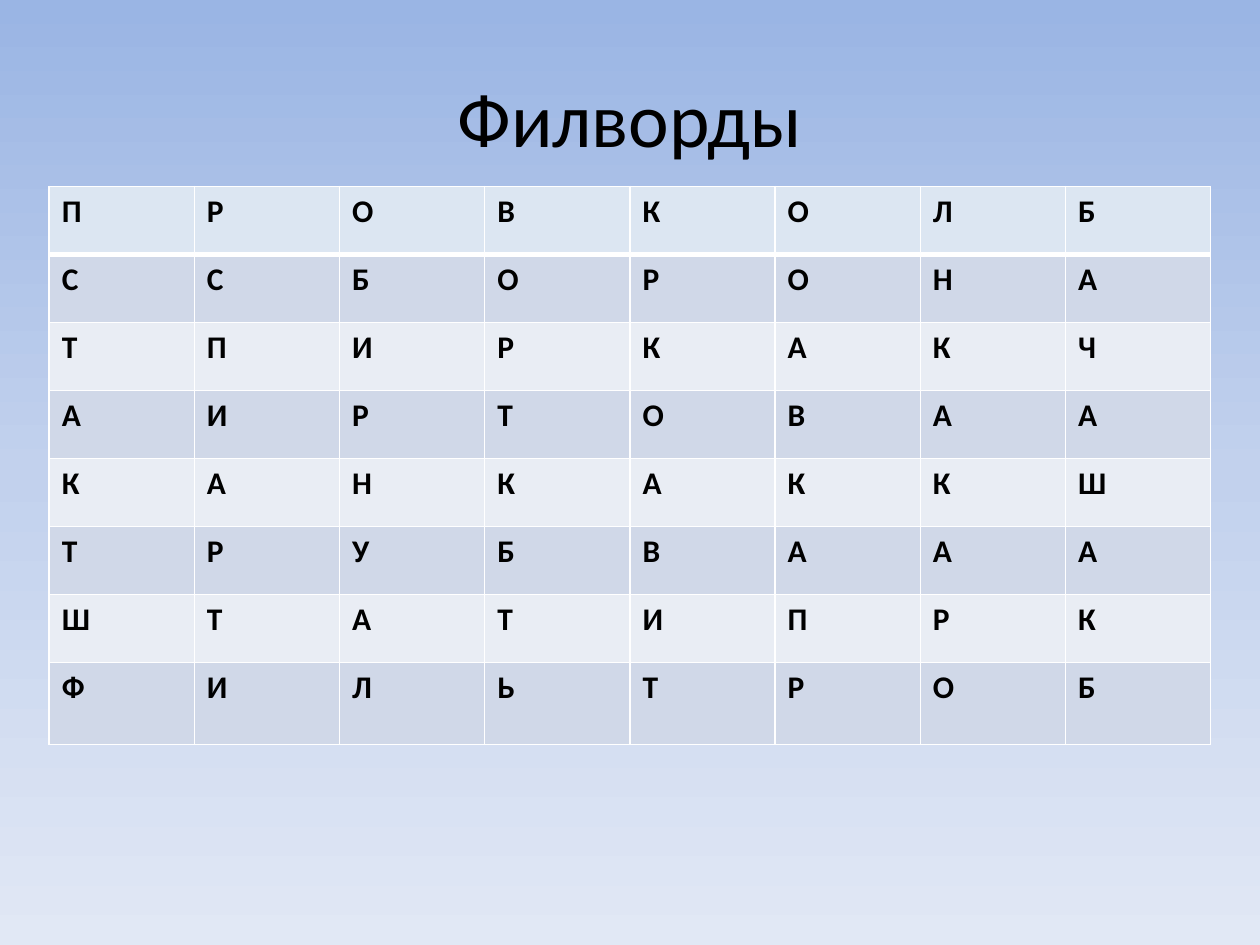
from copy import deepcopy

from lxml.etree import SubElement
from pptx import Presentation
from pptx.dml.color import RGBColor
from pptx.enum.text import MSO_ANCHOR, PP_ALIGN
from pptx.oxml.ns import qn
from pptx.util import Inches, Pt

LETTERS = [
    "ПРОВКОЛБ",
    "ССБОРОНА",
    "ТПИРКАКЧ",
    "АИРТОВАА",
    "КАНКАККШ",
    "ТРУБВААА",
    "ШТАТИПРК",
    "ФИЛЬТРОБ",
]


def color(value):
    return RGBColor.from_string(value)


class Page:
    """Holds the style and the current slide and adds elements to it."""

    font = "Calibri"
    ink = "000000"
    line = "FFFFFF"
    header = "DCE6F2"
    bands = ("E9EDF4", "D0D8E8")

    def __init__(self, deck):
        self.slide = deck.slides.add_slide(deck.slide_layouts[6])

    def background(self, stops):
        fill = self.slide.background.fill
        fill.gradient()
        fill.gradient_angle = 270
        stop_list = self.slide.element.find(".//" + qn("a:gsLst"))
        while len(stop_list) < len(stops):
            stop_list.append(deepcopy(stop_list[0]))
        for stop, (position, value) in zip(fill.gradient_stops, stops):
            stop.position = position
            stop.color.rgb = color(value)

    def set_text(self, frame, text, size, bold=False):
        frame.text = text
        para = frame.paragraphs[0]
        font = para.runs[0].font
        font.name, font.size, font.bold = self.font, Pt(size), bold
        font.color.rgb = color(self.ink)
        return para

    def title(self, text, left, top, width, height):
        box = self.slide.shapes.add_textbox(
            Inches(left), Inches(top), Inches(width), Inches(height))
        frame = box.text_frame
        frame.word_wrap = True
        frame.vertical_anchor = MSO_ANCHOR.MIDDLE
        self.set_text(frame, text, 44).alignment = PP_ALIGN.CENTER

    def border(self, cell, side, width):
        properties = cell._tc.get_or_add_tcPr()
        edge = SubElement(properties, qn("a:ln" + side), w=str(Pt(width)))
        fill = SubElement(edge, qn("a:solidFill"))
        SubElement(fill, qn("a:srgbClr"), val=self.line)

    def letter_grid(self, rows, left, top, width, heights):
        table = self.slide.shapes.add_table(
            len(rows), len(rows[0]), Inches(left), Inches(top),
            Inches(width), Inches(sum(heights))).table
        for index, (letters, height) in enumerate(zip(rows, heights)):
            table.rows[index].height = Inches(height)
            widths = {"L": 1, "R": 1, "T": 3 if index == 1 else 1,
                      "B": 3 if index == 0 else 1}
            shade = self.bands[index % 2] if index else self.header
            for column, letter in enumerate(letters):
                cell = table.cell(index, column)
                for side, thickness in widths.items():
                    self.border(cell, side, thickness)
                cell.fill.solid()
                cell.fill.fore_color.rgb = color(shade)
                self.set_text(cell.text_frame, letter, 18, bold=True)


def main():
    deck = Presentation()
    deck.slide_width, deck.slide_height = Inches(10), Inches(7.5)
    page = Page(deck)
    page.background([(0, "9AB5E4"), (0.5, "C2D1ED"), (1, "E1E8F5")])
    page.title("Филворды", 0.5, 0.3, 9, 1.25)
    page.letter_grid(LETTERS, 0.39, 1.48, 9.22, [0.54] * 7 + [0.65])
    deck.save("out.pptx")


if __name__ == "__main__":
    main()
